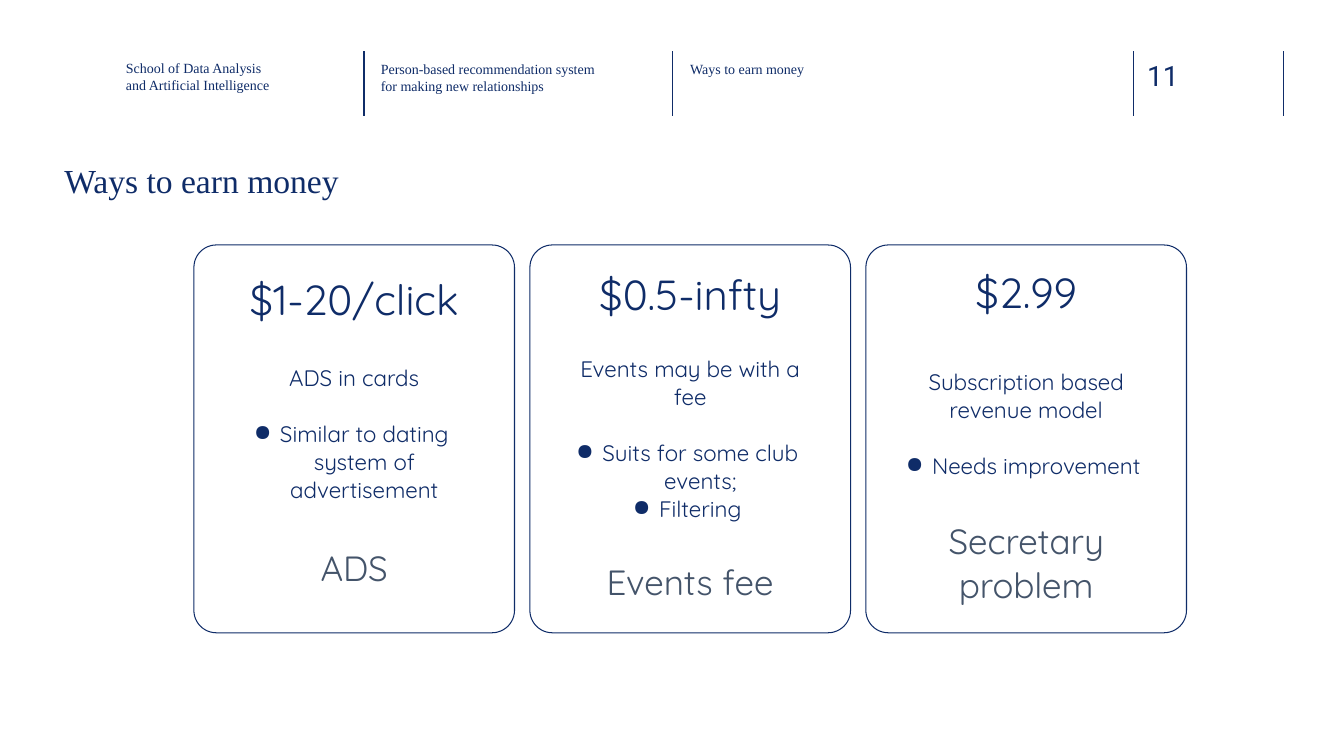
from dataclasses import dataclass

from lxml.etree import SubElement
from pptx import Presentation
from pptx.dml.color import RGBColor
from pptx.enum.shapes import MSO_CONNECTOR as Connector, MSO_SHAPE as Shape
from pptx.enum.text import MSO_ANCHOR as Anchor, MSO_AUTO_SIZE as AutoSize, PP_ALIGN as Align
from pptx.oxml.ns import qn
from pptx.util import Pt

TITLE = "Ways to earn money"
HEADERS = [
    (90, 42.5, 150, ["School of Data Analysis", "and Artificial Intelligence"]),
    (272, 43, 163, ["Person-based recommendation system for making new relationships"]),
    (493, 43, 163, ["Ways to earn money"]),
]
PAGE_NUMBER = "11"
CARDS = [
    ("$1-20/click", "ADS in cards",
     ["Similar to dating system of advertisement"], "ADS", (78, 111.5, 78)),
    ("$0.5-infty", "Events may be with a fee",
     ["Suits for some club events;", "Filtering"], "Events fee", (71.5, 124.5, 71.5)),
    ("$2.99", "Subscription based revenue model",
     ["Needs improvement"], "Secretary problem", (68.5, 119, 80)),
]
DIVIDERS = [260, 480.5, 809.5, 917]
DIVIDER_TOP, DIVIDER_BOTTOM = 36.5, 83
CARD_LEFT, CARD_TOP, CARD_WIDTH, CARD_HEIGHT, CARD_STEP = 138.5, 175, 229, 277, 240
TABLE_WIDTH = 195
CELL_MARGIN = 7.2
NO_GRID_STYLE = "{2D5ABB26-0587-4C30-8999-92F81FD0307C}"


@dataclass(frozen=True)
class Theme:
    """Colours, fonts and type sizes of the slide."""
    navy: RGBColor = RGBColor(0x0F, 0x2C, 0x68)
    slate: RGBColor = RGBColor(0x44, 0x54, 0x6A)
    white: RGBColor = RGBColor(0xFF, 0xFF, 0xFF)
    serif: str = "Times New Roman"
    rounded: str = "Quicksand"
    sans: str = "Roboto"
    header: int = 10
    number: int = 20
    title: int = 24
    price: int = 30
    detail: int = 16
    caption: int = 25


THEME = Theme()


def style(para, face, size, color=THEME.navy, align=Align.LEFT):
    """Set the alignment and font of a paragraph."""
    para.alignment = align
    para.font.name = face
    para.font.size = Pt(size)
    para.font.bold = False
    para.font.color.rgb = color


def indent(para, left=0, first=0, bullet=None):
    """Set the paragraph indent and its bullet, or switch the bullet off."""
    props = para._p.get_or_add_pPr()
    props.set("marL", str(Pt(left)))
    props.set("indent", str(Pt(first)))
    if bullet:
        SubElement(props, qn("a:buChar")).set("char", bullet)
    else:
        SubElement(props, qn("a:buNone"))


def write_box(box, bounds, lines, face, size):
    """Place a text shape without margins and write its lines."""
    box.left, box.top, box.width, box.height = map(Pt, bounds)
    frame = box.text_frame
    frame.margin_left = frame.margin_right = frame.margin_top = frame.margin_bottom = 0
    frame.word_wrap = True
    frame.auto_size = AutoSize.NONE
    frame.vertical_anchor = Anchor.TOP
    frame.text = "\n".join(lines)
    for para in frame.paragraphs:
        indent(para)
        para.space_before = Pt(0)
        style(para, face, size)


def add_divider(page, x):
    """Draw one vertical header rule."""
    line = page.shapes.add_connector(
        Connector.STRAIGHT, Pt(x), Pt(DIVIDER_TOP), Pt(x), Pt(DIVIDER_BOTTOM))
    line.line.color.rgb = THEME.navy
    line.line.width = Pt(1)
    SubElement(line._element.spPr, qn("a:effectLst"))


def add_frame(page, left):
    """Draw the rounded outline of a card."""
    frame = page.shapes.add_shape(
        Shape.ROUNDED_RECTANGLE, Pt(left), Pt(CARD_TOP), Pt(CARD_WIDTH), Pt(CARD_HEIGHT))
    frame.adjustments[0] = 0.07
    frame.shadow.inherit = False
    frame.fill.solid()
    frame.fill.fore_color.rgb = THEME.white
    frame.line.color.rgb = THEME.navy
    frame.line.width = Pt(0.75)


def add_card_table(page, left, card):
    """Add the price, details and caption of a card as a table."""
    price, summary, points, caption, heights = card
    table = page.shapes.add_table(
        3, 1, Pt(left), Pt(CARD_TOP), Pt(TABLE_WIDTH), Pt(sum(heights))).table
    table.first_row = table.horz_banding = False
    table._tbl.tblPr.find(qn("a:tableStyleId")).text = NO_GRID_STYLE
    rows = [
        ([price], THEME.price, THEME.navy),
        ([summary, *points], THEME.detail, THEME.navy),
        ([caption], THEME.caption, THEME.slate),
    ]
    for index, (lines, size, color) in enumerate(rows):
        table.rows[index].height = Pt(heights[index])
        cell = table.cell(index, 0)
        cell.fill.background()
        cell.vertical_anchor = Anchor.MIDDLE
        cell.margin_left = cell.margin_right = Pt(CELL_MARGIN)
        cell.margin_top = cell.margin_bottom = Pt(CELL_MARGIN)
        cell.text = "\n".join(lines)
        for order, para in enumerate(cell.text_frame.paragraphs):
            if order:
                indent(para, 14.4, -18.7, "●")
            if order == 1:
                para.space_before = Pt(20)
            style(para, THEME.rounded, size, color, Align.CENTER)


def main():
    """Build and save the slide."""
    deck = Presentation()
    deck.slide_width, deck.slide_height = Pt(960), Pt(540)
    page = deck.slides.add_slide(deck.slide_layouts[4])
    title, *bodies = page.placeholders

    for x in DIVIDERS:
        add_divider(page, x)
    number = page.shapes.add_textbox(0, 0, 0, 0)
    write_box(number, (819.5, 42, 52.5, 24.5), [PAGE_NUMBER], THEME.sans, THEME.number)

    for body, (left, top, width, lines) in zip(bodies, HEADERS):
        write_box(body, (left, top, width, 32.5), lines, THEME.serif, THEME.header)
    for spare in bodies[len(HEADERS):]:
        spare._element.getparent().remove(spare._element)
    write_box(title, (46, 114, 870.5, 61), [TITLE], THEME.serif, THEME.title)

    for index, card in enumerate(CARDS):
        left = CARD_LEFT + index * CARD_STEP
        add_frame(page, left)
        add_card_table(page, left + (CARD_WIDTH - TABLE_WIDTH) / 2, card)
    deck.save("out.pptx")


if __name__ == "__main__":
    main()
